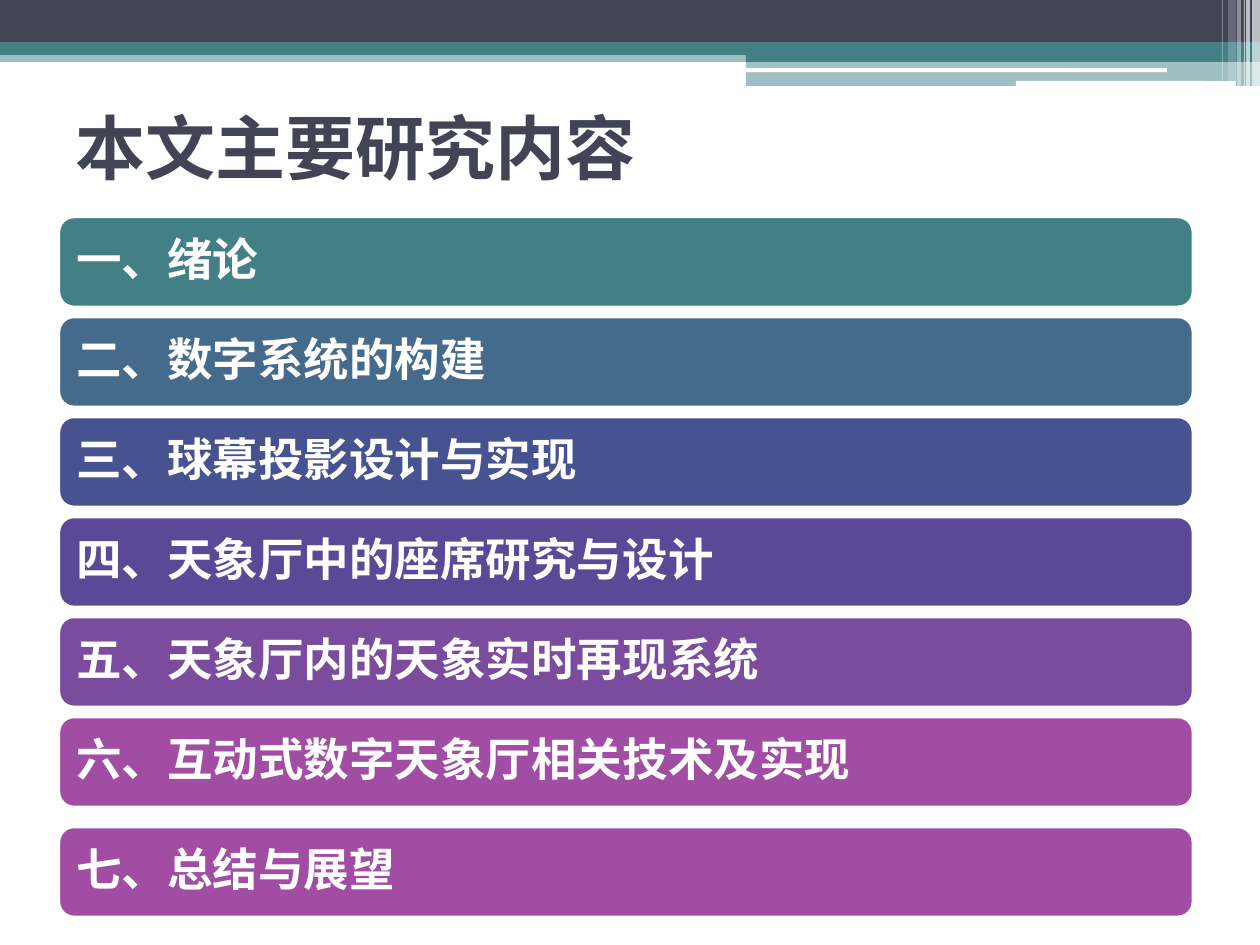
from typing import NamedTuple

from lxml import etree
from pptx import Presentation
from pptx.dml.color import RGBColor
from pptx.enum.shapes import MSO_SHAPE
from pptx.enum.text import MSO_ANCHOR, MSO_AUTO_SIZE, PP_ALIGN
from pptx.oxml.ns import qn
from pptx.util import Emu, Pt

RECT, ROUND = MSO_SHAPE.RECTANGLE, MSO_SHAPE.ROUNDED_RECTANGLE
MIDDLE, LEFT = MSO_ANCHOR.MIDDLE, PP_ALIGN.LEFT
EMU_PER_PX = 914400 / 126
TITLE_ONLY = 5
CJK_FONT = "Noto Sans CJK SC"
NAVY, TEAL, WHITE = "424456", "438086", "FFFFFF"


class Box(NamedTuple):
    x: int
    y: int
    w: int
    h: int


class Band(NamedTuple):
    box: Box
    color: str
    opacity: int = 100
    kind: MSO_SHAPE = RECT


class Chapter(NamedTuple):
    text: str
    color: str
    y: int


HEADER = [
    Band(Box(0, 50, 1260, 12), TEAL, 50),
    Band(Box(0, 0, 1260, 43), NAVY),
    Band(Box(0, 42, 1260, 13), TEAL),
    Band(Box(746, 49, 514, 13), TEAL),
    Band(Box(746, 61, 514, 25), TEAL, 50),
    Band(Box(745, 68, 422, 4), WHITE, kind=ROUND),
    Band(Box(1016, 81, 220, 5), WHITE, kind=ROUND),
    Band(Box(1252, 0, 8, 86), WHITE, 65),
    Band(Box(1246, 0, 4, 86), WHITE, 65),
    Band(Box(1244, 0, 1, 86), WHITE, 60),
    Band(Box(1237, 0, 4, 86), WHITE, 40),
    Band(Box(1228, 0, 8, 81), WHITE, 20),
    Band(Box(1222, 0, 1, 81), WHITE, 30),
]

TOP, PITCH, LAST_TOP = 217, 100, 827
LISTED = [
    ("一、绪论", TEAL),
    ("二、数字系统的构建", "456B8C"),
    ("三、球幕投影设计与实现", "475391"),
    ("四、天象厅中的座席研究与设计", "5A4997"),
    ("五、天象厅内的天象实时再现系统", "7B4B9D"),
    ("六、互动式数字天象厅相关技术及实现", "A04DA3"),
]
CHAPTERS = [Chapter(text, color, TOP + i * PITCH)
            for i, (text, color) in enumerate(LISTED)]
CHAPTERS.append(Chapter("七、总结与展望", "A04DA3", LAST_TOP))


def px(n: int) -> Emu:
    return Emu(round(n * EMU_PER_PX))


def rgb(color: str) -> RGBColor:
    return RGBColor.from_string(color)


def add_band(s, band: Band):
    sp = s.shapes.add_shape(band.kind, *map(px, band.box))
    sp.shadow.inherit = False
    sp.fill.solid()
    sp.fill.fore_color.rgb = rgb(band.color)
    sp.line.fill.background()
    if band.opacity < 100:
        clr = sp.fill._xPr.find(qn("a:solidFill"))[0]
        etree.SubElement(clr, qn("a:alpha"), val=str(band.opacity * 1000))
    return sp


def write(tf, text: str, size: int, color: str, latin: str) -> None:
    """Fill a frame with one bold, left-aligned, vertically centred line."""
    tf.word_wrap = True
    tf.auto_size = MSO_AUTO_SIZE.NONE
    tf.vertical_anchor = MIDDLE
    p = tf.paragraphs[0]
    p.text = text
    p.alignment = LEFT
    font = p.font
    font.size, font.bold, font.name = Pt(size), True, latin
    font.color.rgb = rgb(color)
    etree.SubElement(font._rPr, qn("a:ea"), typeface=CJK_FONT)


def add_chapter(s, chapter: Chapter) -> None:
    sp = add_band(s, Band(Box(59, chapter.y, 1134, 90), chapter.color, kind=ROUND))
    sp.line.color.rgb = rgb(WHITE)
    sp.line.width = Pt(1.5)
    tf = sp.text_frame
    tf.margin_left = tf.margin_right = tf.margin_top = tf.margin_bottom = px(13)
    write(tf, chapter.text, 26, WHITE, CJK_FONT)
    tf.paragraphs[0].line_spacing = 0.9


def main() -> None:
    prs = Presentation()
    prs.slide_width, prs.slide_height = px(1260), px(945)
    s = prs.slides.add_slide(prs.slide_layouts[TITLE_ONLY])
    for band in HEADER:
        add_band(s, band)
    title = s.shapes.title
    title.left, title.top, title.width, title.height = map(px, Box(63, 108, 1134, 78))
    write(title.text_frame, "本文主要研究内容", 40, NAVY, "Karla")
    for chapter in CHAPTERS:
        add_chapter(s, chapter)
    prs.save("out.pptx")


if __name__ == "__main__":
    main()
